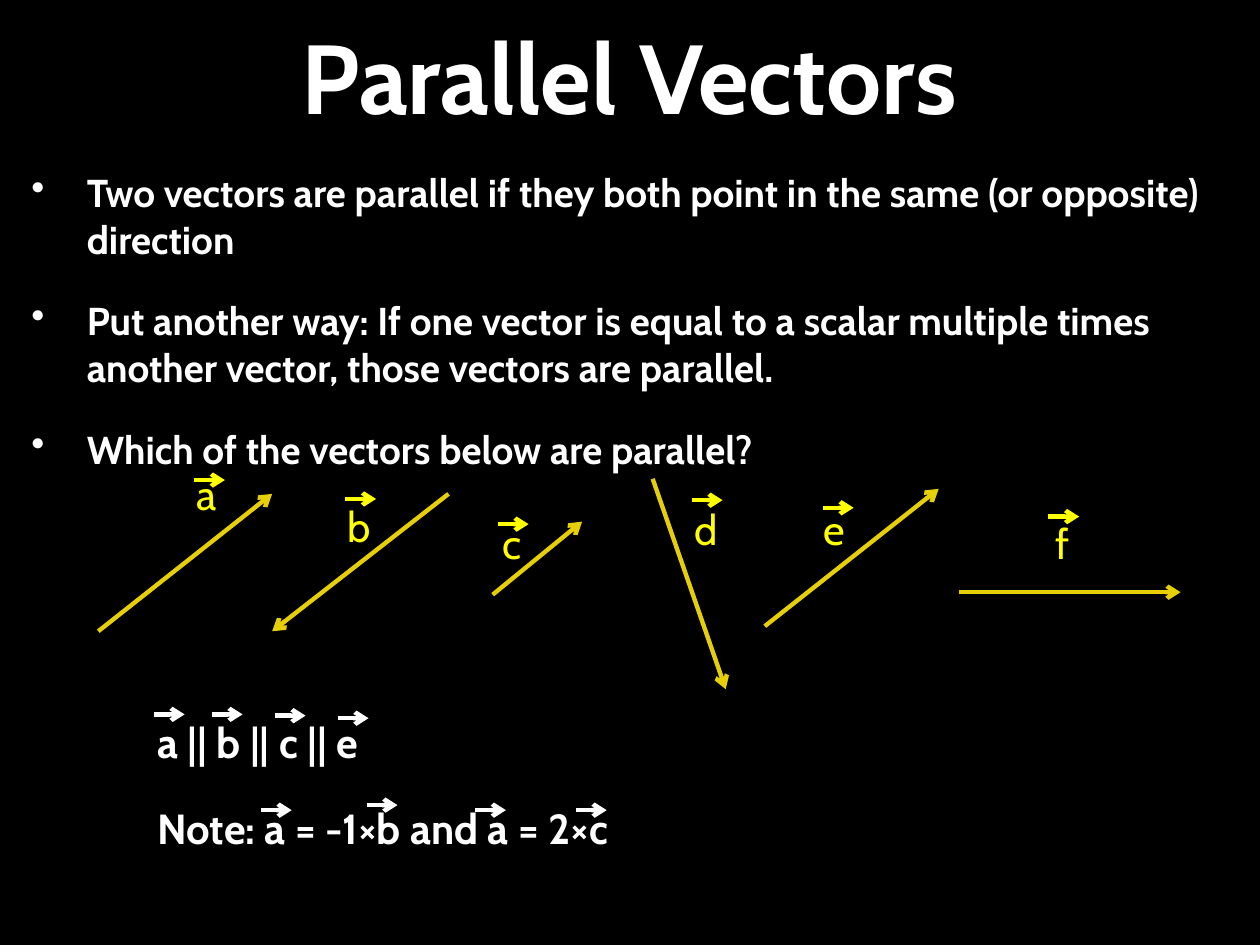
from dataclasses import dataclass
from typing import NamedTuple

from lxml import etree
from pptx import Presentation
from pptx.dml.color import RGBColor
from pptx.enum.shapes import MSO_CONNECTOR
from pptx.enum.text import MSO_ANCHOR, MSO_AUTO_SIZE, PP_ALIGN
from pptx.oxml.ns import qn
from pptx.util import Inches, Pt

STRAIGHT = MSO_CONNECTOR.STRAIGHT
CENTER = PP_ALIGN.CENTER
MIDDLE = MSO_ANCHOR.MIDDLE
GROW = MSO_AUTO_SIZE.SHAPE_TO_FIT_TEXT

WIDTH, HEIGHT = Inches(10), Inches(7.5)
COLUMNS, ROWS = 100, 75


@dataclass(frozen=True)
class Theme:
    font: str = "Cabin"
    background: RGBColor = RGBColor(0x00, 0x00, 0x00)
    text: RGBColor = RGBColor(0xFF, 0xFF, 0xFF)
    label: RGBColor = RGBColor(0xFF, 0xFF, 0x00)
    vector: RGBColor = RGBColor(0xE7, 0xCF, 0x08)
    title_size: float = 56
    body_size: float = 22.2
    note_size: float = 24
    paragraph_gap: float = 20
    line_width: float = 2.5


class Point(NamedTuple):
    column: float
    row: float


class Area(NamedTuple):
    column: float
    row: float
    columns: float
    rows: float


@dataclass(frozen=True)
class Vector:
    letter: str
    tail: Point
    tip: Point
    label: Area
    bar: Point


THEME = Theme()
BAR_LENGTH = 2.45
LABEL_ROWS = 5
BULLET_INDENT = 4.4
NOTE_INDENT = 10

TITLE_AREA = Area(8.5, 1.2, 82.9, 9.5)
BODY_AREA = Area(1.5, 12.9, 97.9, 24.5)
NOTE_AREA = Area(1.5, 56.4, 96.5, 20)

DEFINITIONS = [
    "Two vectors are parallel if they both point in the same (or opposite) direction",
    "Put another way: If one vector is equal to a scalar multiple times another vector, "
    "those vectors are parallel.",
    "Which of the vectors below are parallel?",
]
ANSWERS = ["a || b || c || e", "Note: a = -1×b and a = 2×c"]

VECTORS = [
    Vector("a", Point(7.8, 50.1), Point(21.6, 39.2),
           Area(14.6, 36.7, 3.7, LABEL_ROWS), Point(15.4, 38.1)),
    Vector("b", Point(35.6, 39.2), Point(21.6, 50.1),
           Area(26.6, 39.2, 3.9, LABEL_ROWS), Point(27.4, 39.6)),
    Vector("c", Point(39.1, 47.2), Point(46.2, 41.4),
           Area(38.9, 40.6, 3.5, LABEL_ROWS), Point(39.5, 41.6)),
    Vector("d", Point(51.8, 38), Point(57.6, 54.7),
           Area(54.1, 39.5, 3.9, LABEL_ROWS), Point(54.9, 39.7)),
    Vector("e", Point(60.7, 49.7), Point(74.5, 38.8),
           Area(64.4, 39.5, 3.7, LABEL_ROWS), Point(65.3, 40.3)),
    Vector("f", Point(76.1, 47), Point(93.7, 47),
           Area(82.8, 40.6, 3.3, LABEL_ROWS), Point(83.2, 41)),
]
ANSWER_BARS = [
    Point(12.2, 56.7), Point(16.8, 56.7), Point(21.8, 56.8), Point(26.8, 57),
    Point(20.7, 64.3), Point(29.1, 63.9), Point(37.7, 64.3), Point(45.7, 64.3),
]


def across(columns: float) -> int:
    return round(WIDTH * columns / COLUMNS)


def down(rows: float) -> int:
    return round(HEIGHT * rows / ROWS)


def add_text(slide, area: Area, lines: list[str], size: float, color: RGBColor,
             bold: bool = True, indent: float = 0, bulleted: bool = False):
    """Add a text box with one paragraph per line and return its frame."""
    box = slide.shapes.add_textbox(across(area.column), down(area.row),
                                   across(area.columns), down(area.rows))
    frame = box.text_frame
    frame.word_wrap = True
    for index, line in enumerate(lines):
        paragraph = frame.paragraphs[0] if index == 0 else frame.add_paragraph()
        if index:
            paragraph.space_before = Pt(THEME.paragraph_gap)
        properties = paragraph._p.get_or_add_pPr()
        properties.set("marL", str(across(indent)))
        if bulleted:
            properties.set("indent", str(-across(indent)))
            etree.SubElement(properties, qn("a:buChar")).set("char", "•")
        run = paragraph.add_run()
        run.text = line
        font_format = {"name": THEME.font, "size": Pt(size), "bold": bold}
        for attribute, value in font_format.items():
            setattr(run.font, attribute, value)
        run.font.color.rgb = color
    return frame


def add_arrow(slide, start: Point, end: Point, color: RGBColor) -> None:
    arrow = slide.shapes.add_connector(STRAIGHT, across(start.column), down(start.row),
                                       across(end.column), down(end.row))
    arrow.line.color.rgb = color
    arrow.line.width = Pt(THEME.line_width)
    etree.SubElement(arrow.line._get_or_add_ln(), qn("a:tailEnd")).set("type", "arrow")
    etree.SubElement(arrow._element.spPr, qn("a:effectLst"))


def add_bar(slide, start: Point, color: RGBColor) -> None:
    """Draw the small arrow that marks a letter as a vector."""
    add_arrow(slide, start, Point(start.column + BAR_LENGTH, start.row), color)


def add_vector(slide, vector: Vector) -> None:
    add_arrow(slide, vector.tail, vector.tip, THEME.vector)
    label = add_text(slide, vector.label, [vector.letter], THEME.note_size,
                     THEME.label, bold=False)
    label.word_wrap = False
    label.auto_size = GROW
    add_bar(slide, vector.bar, THEME.label)


def main() -> None:
    presentation = Presentation()
    presentation.slide_width, presentation.slide_height = WIDTH, HEIGHT
    slide = presentation.slides.add_slide(presentation.slide_layouts[6])
    slide.background.fill.solid()
    slide.background.fill.fore_color.rgb = THEME.background

    title = add_text(slide, TITLE_AREA, ["Parallel Vectors"], THEME.title_size, THEME.text)
    title.vertical_anchor = MIDDLE
    title.paragraphs[0].alignment = CENTER
    add_text(slide, BODY_AREA, DEFINITIONS, THEME.body_size, THEME.text,
             indent=BULLET_INDENT, bulleted=True)
    for vector in VECTORS:
        add_vector(slide, vector)
    add_text(slide, NOTE_AREA, ANSWERS, THEME.note_size, THEME.text, indent=NOTE_INDENT)
    for bar in ANSWER_BARS:
        add_bar(slide, bar, THEME.text)

    presentation.save("out.pptx")


if __name__ == "__main__":
    main()
